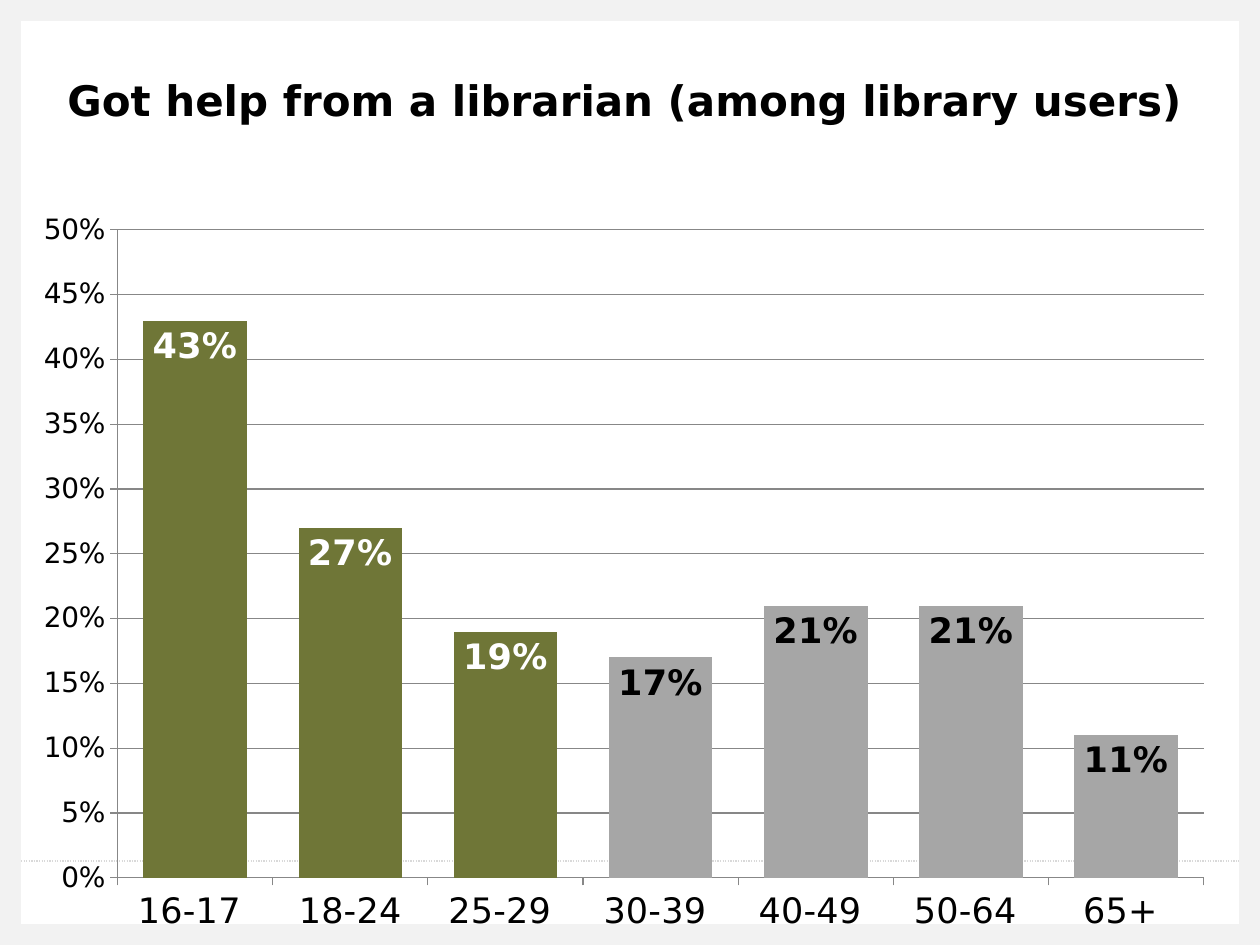
from lxml import etree
from pptx import Presentation
from pptx.chart.data import CategoryChartData
from pptx.dml.color import RGBColor
from pptx.enum.chart import XL_CHART_TYPE, XL_LABEL_POSITION, XL_TICK_MARK
from pptx.enum.dml import MSO_LINE
from pptx.enum.shapes import MSO_CONNECTOR, MSO_SHAPE
from pptx.enum.text import MSO_ANCHOR, PP_ALIGN
from pptx.oxml import parse_xml
from pptx.oxml.ns import nsdecls, qn
from pptx.util import Pt

PX = 914400 / 126
WIDTH, HEIGHT, EDGE = 1260, 945, 21
FONT = "DejaVu Sans"
BLACK = RGBColor(0x00, 0x00, 0x00)
WHITE = RGBColor(0xFF, 0xFF, 0xFF)
PALE = RGBColor(0xF2, 0xF2, 0xF2)
RULE = RGBColor(0xD9, 0xD9, 0xD9)
AXIS = RGBColor(0x87, 0x87, 0x87)
GRAY = RGBColor(0xA6, 0xA6, 0xA6)
OLIVE = RGBColor(0x6F, 0x76, 0x37)

COLUMN = XL_CHART_TYPE.COLUMN_CLUSTERED
INSIDE = XL_LABEL_POSITION.INSIDE_END
OUT = XL_TICK_MARK.OUTSIDE
RECT = MSO_SHAPE.RECTANGLE
LINE = MSO_CONNECTOR.STRAIGHT
DOTS = MSO_LINE.ROUND_DOT
MIDDLE = MSO_ANCHOR.MIDDLE
CENTER = PP_ALIGN.CENTER

TITLE = "Got help from a librarian (among library users)"
AGES = ["16-17 ", "18-24", "25-29 ", "30-39 ", "40-49 ", "50-64 ", "65+ "]
SHARES = [0.43, 0.27, 0.19, 0.17, 0.21, 0.21, 0.11]
YOUNG = 3


def emu(*sizes):
    """Turn px lengths into EMU."""
    return [round(size * PX) for size in sizes]


def apply(item, **values):
    """Set each named attribute of an item."""
    for name, value in values.items():
        setattr(item, name, value)


def style(font, size, color, bold=False):
    """Set the face, size, weight and colour of a font."""
    apply(font, name=FONT, size=Pt(size), bold=bold)
    font.color.rgb = color


def add_frame(slide, box):
    """Draw the pale border and the dotted footer rule."""
    x, y, w, h = box
    inner = w - 2 * EDGE
    bands = [
        (x, y, EDGE, h),
        (x + w - EDGE, y, EDGE, h),
        (x + EDGE, y, inner, EDGE),
        (x + EDGE, y + h - EDGE, inner, EDGE),
    ]
    for band in bands:
        shape = slide.shapes.add_shape(RECT, *emu(*band))
        shape.shadow.inherit = False
        shape.fill.solid()
        shape.fill.fore_color.rgb = PALE
        shape.line.fill.background()
    level = y + h - 84
    rule = slide.shapes.add_connector(
        LINE, *emu(x + EDGE, level, x + w - EDGE, level))
    apply(rule.line, width=Pt(0.75), dash_style=DOTS)
    rule.line.color.rgb = RULE
    etree.SubElement(rule._element.spPr, qn("a:effectLst"))


def add_title(slide, box):
    """Write the centred slide title."""
    frame = slide.shapes.add_textbox(*emu(*box)).text_frame
    apply(frame, word_wrap=True, vertical_anchor=MIDDLE)
    line = frame.paragraphs[0]
    apply(line, text=TITLE, alignment=CENTER)
    style(line.runs[0].font, 24, BLACK, True)


def set_plot(chart, box, inset):
    """Fix the inner plot area by its px inset within the chart box."""
    x, y, w, h = inset
    parts = {"x": x / box[2], "y": y / box[3],
             "w": w / box[2], "h": h / box[3]}
    sizes = "".join(f'<c:{key} val="{val:.2f}"/>' for key, val in parts.items())
    layout = parse_xml(
        f'<c:layout {nsdecls("c")}><c:manualLayout>'
        '<c:layoutTarget val="inner"/><c:xMode val="edge"/>'
        f'<c:yMode val="edge"/>{sizes}</c:manualLayout></c:layout>')
    area = chart._chartSpace.chart.plotArea
    for old in area.findall(qn("c:layout")):
        area.remove(old)
    area.insert(0, layout)


def style_axes(chart):
    """Format both axes and the gridlines."""
    cat, val = chart.category_axis, chart.value_axis
    for axis, size in ((cat, 20), (val, 16)):
        apply(axis, major_tick_mark=OUT)
        axis.format.line.color.rgb = AXIS
        style(axis.tick_labels.font, size, BLACK)
    apply(val, minimum_scale=0, maximum_scale=0.5, major_unit=0.05,
          has_major_gridlines=True)
    apply(val.tick_labels, number_format="0%", number_format_is_linked=False)
    val.major_gridlines.format.line.color.rgb = AXIS


def style_bars(plot):
    """Colour the columns and their value labels by age group."""
    apply(plot, gap_width=50, vary_by_categories=False)
    bars = plot.series[0]
    bars.format.fill.solid()
    bars.format.fill.fore_color.rgb = GRAY
    labels = bars.data_labels
    apply(labels, show_value=True, position=INSIDE, number_format="0%",
          number_format_is_linked=False)
    style(labels.font, 20, WHITE, True)
    for index in range(len(SHARES)):
        point = bars.points[index]
        if index < YOUNG:
            point.format.fill.solid()
            point.format.fill.fore_color.rgb = OLIVE
        else:
            style(point.data_label.font, 20, BLACK, True)
            point.data_label.position = INSIDE


def add_bars(slide, box):
    """Place the column chart of shares by age."""
    data = CategoryChartData(number_format="0%")
    data.categories = AGES
    data.add_series("Series 1", SHARES)
    chart = slide.shapes.add_chart(COLUMN, *emu(*box), data).chart
    apply(chart, has_legend=False, has_title=False)
    style(chart.font, 10, BLACK)
    set_plot(chart, box, (97, 30, 1086, 647))
    style_axes(chart)
    style_bars(chart.plots[0])


def main():
    """Build and save the slide."""
    deck = Presentation()
    wide, high = emu(WIDTH, HEIGHT)
    apply(deck, slide_width=wide, slide_height=high)
    slide = deck.slides.add_slide(deck.slide_layouts[6])
    slide.background.fill.solid()
    slide.background.fill.fore_color.rgb = WHITE
    add_frame(slide, (0, 0, WIDTH, HEIGHT))
    add_title(slide, (EDGE, EDGE, 1207, 158))
    add_bars(slide, (EDGE, 200, 1207, 745))
    deck.save("out.pptx")


if __name__ == "__main__":
    main()
